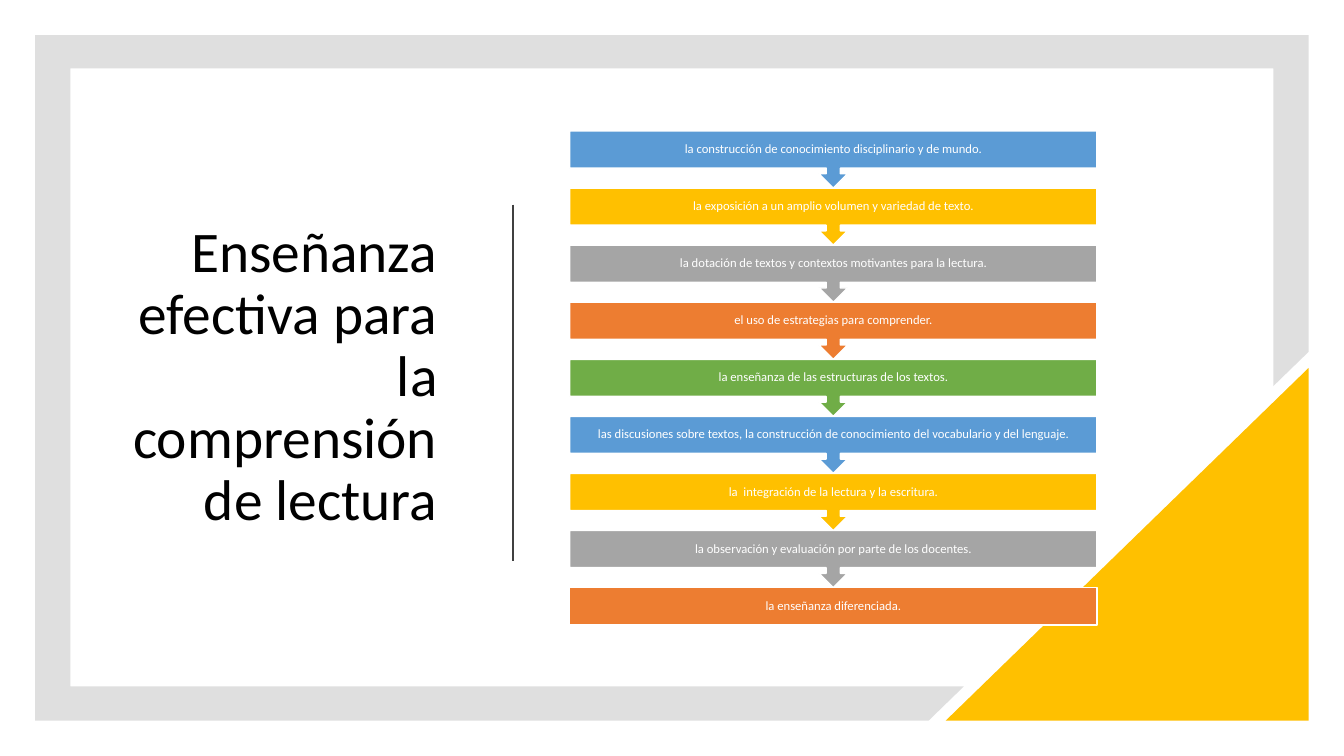
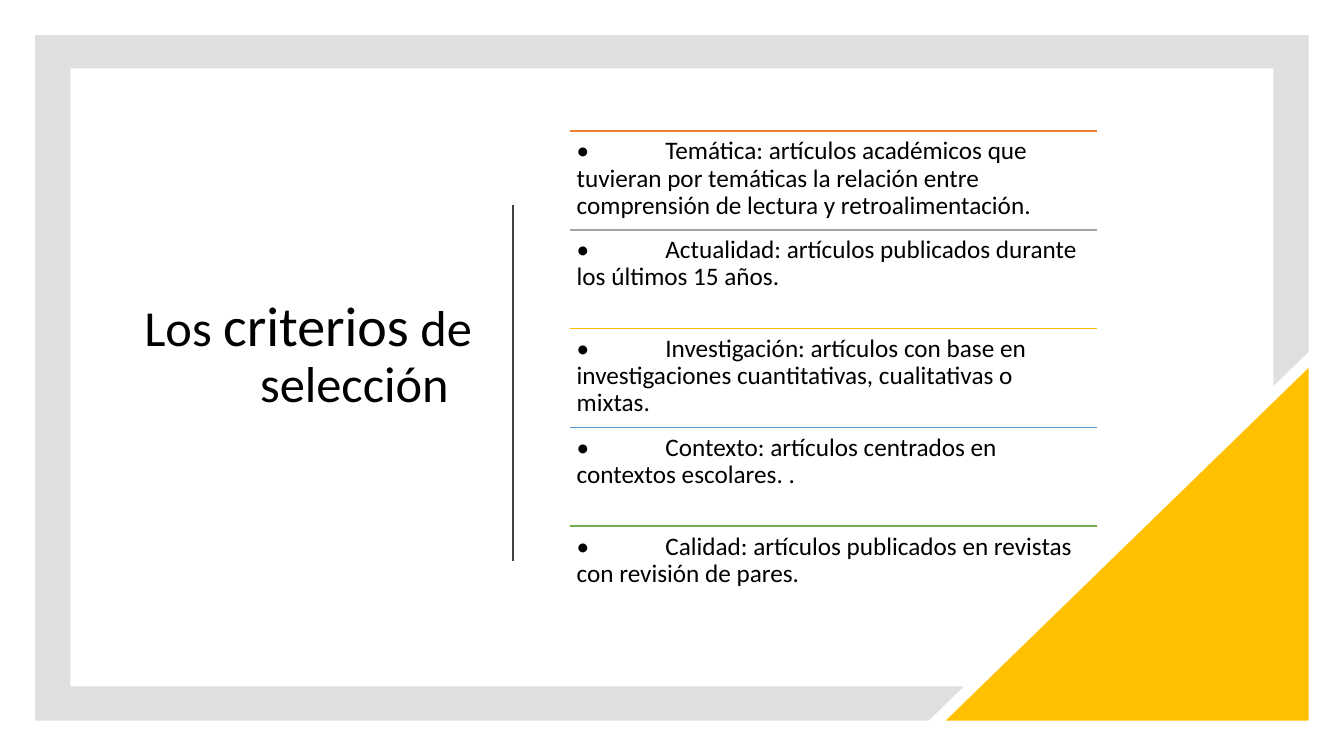
from dataclasses import dataclass
from itertools import cycle

from lxml.etree import SubElement
from pptx import Presentation
from pptx.dml.color import RGBColor
from pptx.enum.shapes import MSO_CONNECTOR, MSO_SHAPE
from pptx.enum.text import MSO_ANCHOR, MSO_AUTO_SIZE, PP_ALIGN
from pptx.oxml.ns import qn
from pptx.util import Inches, Pt


@dataclass(frozen=True)
class Theme:
    font: str = "Calibri"
    ink: str = "000000"
    paper: str = "FFFFFF"
    frame: str = "808080"
    frame_alpha: int = 25
    divider: str = "404040"
    blue: str = "5B9BD5"
    yellow: str = "FFC000"
    gray: str = "A5A5A5"
    orange: str = "ED7D31"
    green: str = "70AD47"
    title_size: int = 41
    short_title_size: int = 36
    emphasis_size: int = 40
    step_size: int = 9
    criterion_size: int = 18
    line_spacing: float = 0.9
    inset: float = 0.07


THEME = Theme()

# Column shared by the content of both slides
COLUMN_LEFT, COLUMN_TOP, COLUMN_WIDTH = 5.65, 1.3, 5.23

FRAME_OUTLINE = [
    (0.35, 0.35), (12.98, 0.35), (12.98, 3.49), (12.63, 3.83), (12.63, 0.68),
    (0.7, 0.68), (0.7, 6.81), (9.56, 6.81), (9.21, 7.15), (0.35, 7.15),
]

STEPS = [
    "la construcción de conocimiento disciplinario y de mundo.",
    "la exposición a un amplio volumen y variedad de texto.",
    "la dotación de textos y contextos motivantes para la lectura.",
    "el uso de estrategias para comprender.",
    "la enseñanza de las estructuras de los textos.",
    "las discusiones sobre textos, la construcción de conocimiento del vocabulario y del lenguaje.",
    "la  integración de la lectura y la escritura.",
    "la observación y evaluación por parte de los docentes.",
    "la enseñanza diferenciada.",
]
STEP_COLORS = (THEME.blue, THEME.yellow, THEME.gray, THEME.orange, THEME.green)

CRITERIA = [
    ("Temática: artículos académicos que tuvieran por temáticas la relación entre "
     "comprensión de lectura y retroalimentación.", THEME.orange),
    ("Actualidad: artículos publicados durante los últimos 15 años.", THEME.gray),
    ("Investigación: artículos con base en investigaciones cuantitativas, "
     "cualitativas o mixtas.", THEME.yellow),
    ("Contexto: artículos centrados en contextos escolares. .", THEME.blue),
    ("Calidad: artículos publicados en revistas con revisión de pares.", THEME.green),
]


def box(left, top, width, height):
    return Inches(left), Inches(top), Inches(width), Inches(height)


class Deck:
    """Holds the style and the current slide."""

    def __init__(self, theme):
        self.theme = theme
        self.presentation = Presentation()
        self.presentation.slide_width = Inches(13.33)
        self.presentation.slide_height = Inches(7.5)
        self.slide = None

    def new_slide(self):
        title_only = self.presentation.slide_layouts[5]
        self.slide = self.presentation.slides.add_slide(title_only)
        self.backdrop()

    # Shared decoration
    def backdrop(self):
        corners = [(Inches(x), Inches(y)) for x, y in FRAME_OUTLINE]
        builder = self.slide.shapes.build_freeform(*corners[0])
        builder.add_line_segments(corners[1:], close=True)
        frame = builder.convert_to_shape()
        self.paint(frame, self.theme.frame)
        tint = frame.fill._xPr.find(qn("a:solidFill"))[0]
        SubElement(tint, qn("a:alpha"), val=str(self.theme.frame_alpha * 1000))

        corner = self.shape(MSO_SHAPE.RIGHT_TRIANGLE, (9.38, 3.65, 3.6, 3.5), self.theme.yellow)
        corner._element.spPr.find(qn("a:xfrm")).set("flipH", "1")
        self.line((5.09, 2.03), (5.09, 5.57), self.theme.divider, 1.5)

    def paint(self, shape, fill, outline=None):
        shape.shadow.inherit = False
        shape.fill.solid()
        shape.fill.fore_color.rgb = RGBColor.from_string(fill)
        if outline:
            shape.line.color.rgb = RGBColor.from_string(outline)
            shape.line.width = Pt(1)
        else:
            shape.line.fill.background()

    def shape(self, preset, place, fill, outline=None):
        shape = self.slide.shapes.add_shape(preset, *box(*place))
        self.paint(shape, fill, outline)
        return shape

    def line(self, start, end, color, width):
        line = self.slide.shapes.add_connector(
            MSO_CONNECTOR.STRAIGHT, *(Inches(v) for v in start + end))
        line.line.color.rgb = RGBColor.from_string(color)
        line.line.width = Pt(width)
        SubElement(line._element.spPr, qn("a:effectLst"))

    # Text
    def style_run(self, run, size, color):
        run.font.name = self.theme.font
        run.font.size = Pt(size)
        run.font.color.rgb = RGBColor.from_string(color)

    def text(self, holder, words, size, color, align, anchor):
        frame = holder.text_frame
        frame.word_wrap = True
        frame.vertical_anchor = anchor
        frame.margin_left = frame.margin_right = Inches(self.theme.inset)
        frame.margin_top = frame.margin_bottom = Inches(self.theme.inset)
        frame.text = words
        paragraph = frame.paragraphs[0]
        paragraph.alignment = align
        paragraph.line_spacing = self.theme.line_spacing
        self.style_run(paragraph.runs[0], size, color)
        return paragraph

    def title(self, place, lines):
        """Each line is a list of (words, size) pairs."""
        title = self.slide.shapes.title
        title.left, title.top, title.width, title.height = box(*place)
        frame = title.text_frame
        frame.word_wrap = True
        frame.auto_size = MSO_AUTO_SIZE.NONE
        frame.vertical_anchor = MSO_ANCHOR.MIDDLE
        for index, line in enumerate(lines):
            paragraph = frame.add_paragraph() if index else frame.paragraphs[0]
            paragraph.alignment = PP_ALIGN.RIGHT
            paragraph.line_spacing = self.theme.line_spacing
            for words, size in line:
                run = paragraph.add_run()
                run.text = words
                self.style_run(run, size, self.theme.ink)
        return frame.paragraphs

    # Content elements
    def step(self, words, top, height, color, last):
        preset = MSO_SHAPE.RECTANGLE if last else MSO_SHAPE.DOWN_ARROW_CALLOUT
        step = self.shape(preset, (COLUMN_LEFT, top, COLUMN_WIDTH, height), color, self.theme.paper)
        self.text(step, words, self.theme.step_size, self.theme.paper,
                  PP_ALIGN.CENTER, MSO_ANCHOR.MIDDLE)

    def criterion(self, words, top, height, color):
        self.line((COLUMN_LEFT, top), (COLUMN_LEFT + COLUMN_WIDTH, top), color, 1)
        criterion = self.slide.shapes.add_textbox(*box(COLUMN_LEFT, top, COLUMN_WIDTH, height))
        paragraph = self.text(criterion, "•\t" + words, self.theme.criterion_size,
                              self.theme.ink, PP_ALIGN.LEFT, MSO_ANCHOR.TOP)
        # Only the first line is tabbed; the next ones return to the margin
        tabs = SubElement(paragraph._p.get_or_add_pPr(), qn("a:tabLst"))
        SubElement(tabs, qn("a:tab"), pos=str(Inches(0.88)), algn="l")


def reading_slide(deck):
    deck.new_slide()
    deck.title((1.1, 1.3, 3.34, 4.9),
               [[("Enseñanza efectiva para la comprensión de lectura", THEME.title_size)]])
    last_top, last_height = 5.83, 0.37
    last = len(STEPS) - 1
    pitch = (last_top - COLUMN_TOP) / last
    for index, (words, color) in enumerate(zip(STEPS, cycle(STEP_COLORS))):
        is_last = index == last
        height = last_height if is_last else pitch
        deck.step(words, COLUMN_TOP + index * pitch, height, color, is_last)


def criteria_slide(deck):
    deck.new_slide()
    size = THEME.short_title_size
    ending = deck.title((1.18, 1.08, 3.6, 4.9), [
        [("Los ", size), ("criterios", THEME.emphasis_size), (" de", size)],
        [("selección", size)],
    ])[-1]
    # The second line stops short of the right margin
    ending.alignment = PP_ALIGN.LEFT
    ending._p.get_or_add_pPr().set("marL", str(Inches(1.3)))
    pitch = 0.98
    for index, (words, color) in enumerate(CRITERIA):
        deck.criterion(words, COLUMN_TOP + index * pitch, pitch, color)


def main():
    deck = Deck(THEME)
    reading_slide(deck)
    criteria_slide(deck)
    deck.presentation.save("out.pptx")


if __name__ == "__main__":
    main()
